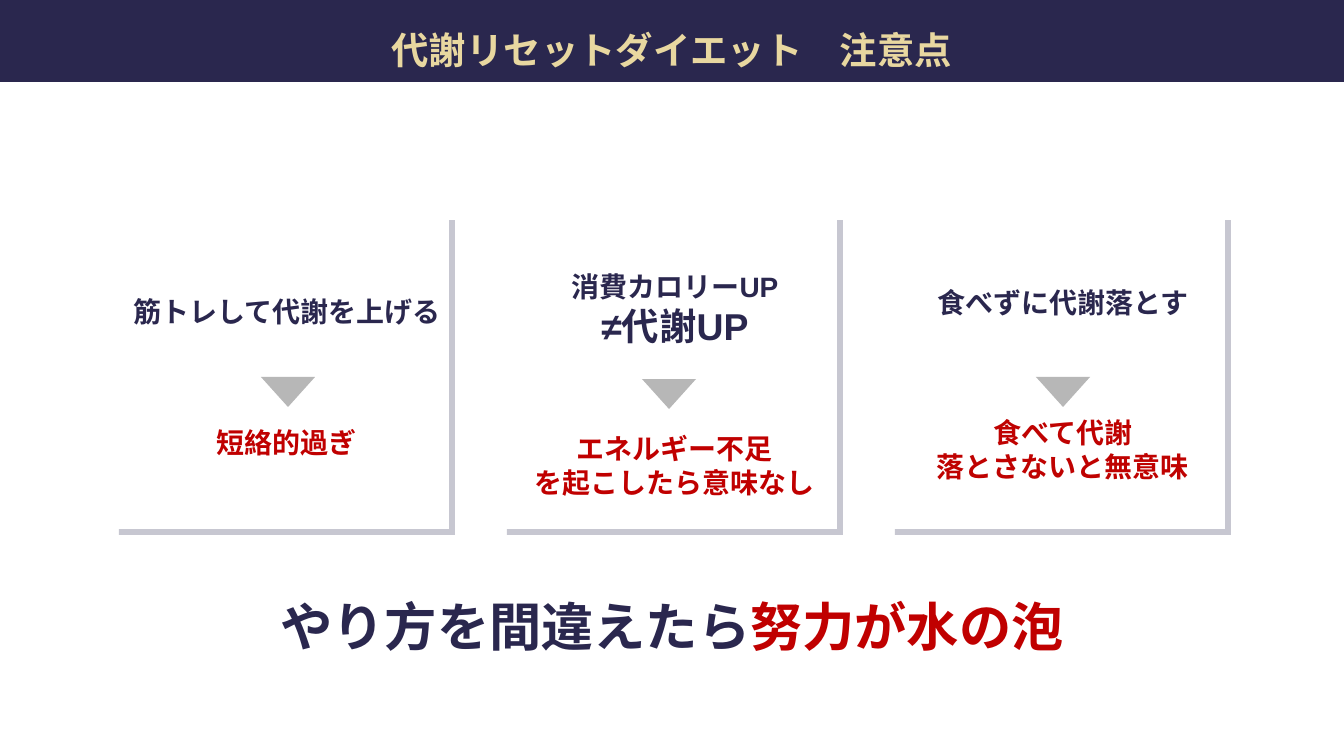
from lxml.etree import SubElement
from pptx import Presentation
from pptx.dml.color import RGBColor
from pptx.enum.shapes import MSO_SHAPE as Shape
from pptx.enum.text import MSO_ANCHOR as Anchor, PP_ALIGN as Align
from pptx.oxml.ns import qn
from pptx.util import Emu, Pt

EMU_PER_PX = 914400 / 134.4
NAVY, RED, GOLD, GREY, WHITE = "2A274E", "C00000", "E8D7A0", "B7B7B7", "FFFFFF"


def add_block(kind, left, top, width, height, color):
    """Add a borderless preset shape; lengths in px."""
    frame = [Emu(round(n * EMU_PER_PX)) for n in (left, top, width, height)]
    block = page.shapes.add_shape(kind, *frame)
    block.shadow.inherit = False
    block.fill.solid()
    block.fill.fore_color.rgb = RGBColor.from_string(color)
    block.line.fill.background()
    return block


def write(box, lines, anchor=Anchor.MIDDLE):
    """Fill box with centred lines of (space before in pt, [(text, size, color)])."""
    body = box.text_frame
    body.word_wrap = True
    body.vertical_anchor = anchor
    body.margin_left = body.margin_right = inset
    body.margin_top = body.margin_bottom = inset
    for index, (gap, runs) in enumerate(lines):
        para = body.add_paragraph() if index else body.paragraphs[0]
        para.alignment = Align.CENTER
        if gap:
            para.space_before = Pt(gap)
        for text, size, color in runs:
            span = para.add_run()
            span.text = text
            span.font.size = Pt(size)
            span.font.bold = True
            span.font.name = "Arial"
            span.font.color.rgb = RGBColor.from_string(color)
            SubElement(span.font._element, qn("a:ea"), typeface="Arial")


deck = Presentation()
deck.slide_width = Emu(round(1344 * EMU_PER_PX))
deck.slide_height = Emu(round(756 * EMU_PER_PX))
page = deck.slides.add_slide(deck.slide_layouts[6])
inset = Emu(91440)

# Title band
band = add_block(Shape.RECTANGLE, 0, 0, 1344, 82, NAVY)
write(band, [(0, [("代謝リセットダイエット\u3000注意点".replace("\u3000", "　"), 20, GOLD)])], Anchor.TOP)
band.text_frame.paragraphs[0].line_spacing = 1.3

# Cards: text top, arrow left, arrow top, lines
cards = [
    (317, 261, 377, [
        (0, [("筋トレして代謝を上げる", 15, NAVY)]),
        (52, [("短絡的過ぎ", 15, RED)]),
    ]),
    (324, 642, 379, [
        (0, [("消費カロリーUP", 15, NAVY)]),
        (0, [("≠代謝UP", 20, NAVY)]),
        (45, [("エネルギー不足", 15, RED)]),
        (0, [("を起こしたら意味なし", 15, RED)]),
    ]),
    (324, 1036, 377, [
        (0, [("食べずに代謝落とす", 15, NAVY)]),
        (52, [("食べて代謝", 15, "BF0201")]),
        (0, [("落とさないと無意味", 15, "BF0201")]),
    ]),
]
card_width, card_height, card_step, offset = 336, 315, 388, 6
for column, (text_top, arrow_left, arrow_top, lines) in enumerate(cards):
    left = 113 + column * card_step
    backing = add_block(Shape.RECTANGLE, left + offset, 214 + offset,
                        card_width, card_height, NAVY)
    tint = backing.fill._xPr.find(qn("a:solidFill"))[0]
    SubElement(tint, qn("a:alpha"), val="26000")
    add_block(Shape.RECTANGLE, left, 214, card_width, card_height, WHITE)

    frame = [Emu(round(n * EMU_PER_PX))
             for n in (left + offset, text_top, card_width, 120)]
    write(page.shapes.add_textbox(*frame), lines)

    arrow = add_block(Shape.ISOSCELES_TRIANGLE, arrow_left, arrow_top, 54, 30, GREY)
    arrow.rotation = 180

# Conclusion
frame = [Emu(round(n * EMU_PER_PX)) for n in (0, 581, 1344, 90)]
write(page.shapes.add_textbox(*frame), [
    (0, [("やり方を間違えたら", 28, NAVY), ("努力が水の泡", 28, RED)]),
])

deck.save("out.pptx")
